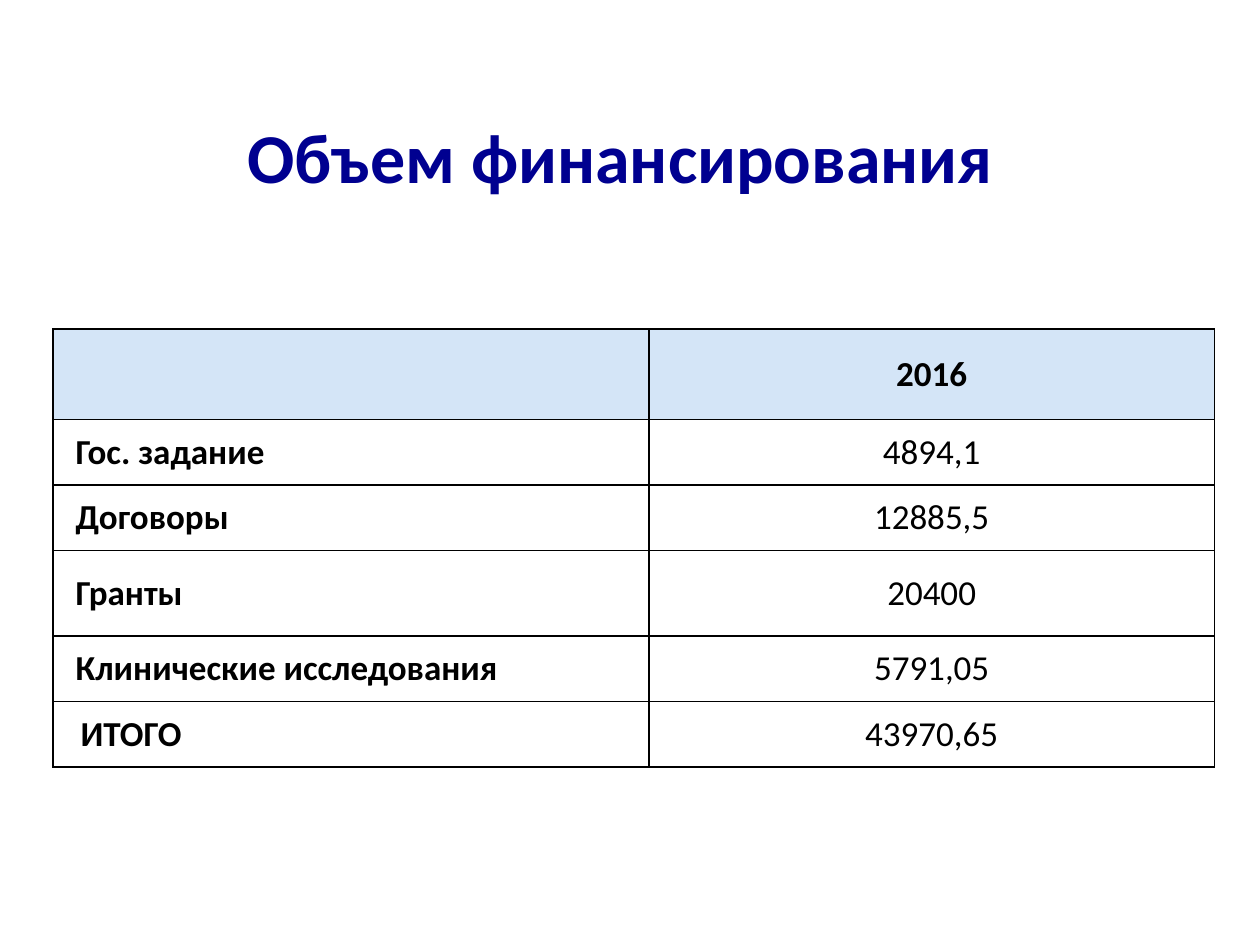
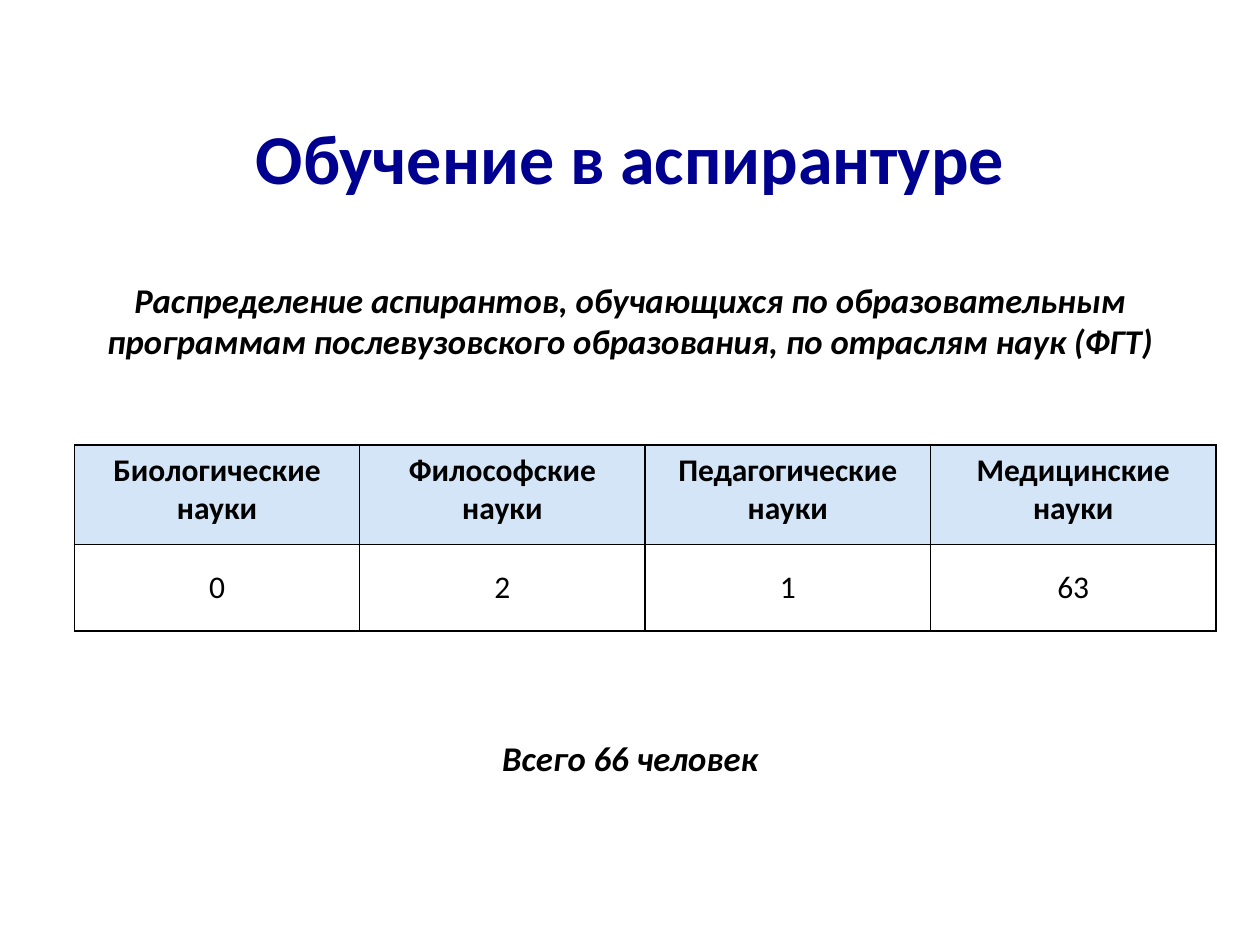
from dataclasses import dataclass

from lxml.etree import SubElement
from pptx import Presentation
from pptx.dml.color import RGBColor as RGB
from pptx.enum.text import MSO_ANCHOR as Anchor, PP_ALIGN as Align
from pptx.oxml.ns import qn
from pptx.util import Inches, Pt


# Shared look
@dataclass(frozen=True)
class Theme:
    face: str = "Calibri"
    navy: RGB = RGB(0x00, 0x00, 0x90)
    black: RGB = RGB(0x00, 0x00, 0x00)
    head: RGB = RGB(0xD4, 0xE5, 0xF7)
    title: float = 40
    note: float = 19.8
    line: float = 1


@dataclass(frozen=True)
class Box:
    left: float
    top: float
    width: float
    height: float

    def place(self) -> tuple:
        return tuple(map(Inches, (self.left, self.top, self.width, self.height)))


@dataclass(frozen=True)
class Pad:
    left: float = 0.1
    side: float = 0.1
    edge: float = 0.05


@dataclass(frozen=True)
class Row:
    height: float
    texts: tuple
    pad: Pad = Pad()
    head: bool = False
    anchor: Anchor = Anchor.MIDDLE


@dataclass(frozen=True)
class Grid:
    box: Box
    cols: tuple
    rows: tuple
    size: float
    labels: bool = False


THEME = Theme()


def set_all(item, values: dict) -> None:
    for name, value in values.items():
        setattr(item, name, value)


def write(frame, text: str, size: float, color: RGB = THEME.black,
          align: Align = Align.CENTER, **style) -> None:
    """Fill a text frame with one styled paragraph."""
    para = frame.paragraphs[0]
    para.alignment = align
    font = para.font
    if text:
        run = para.add_run()
        run.text = text
        font = run.font
    set_all(font, {"name": THEME.face, "size": Pt(size), **style})
    font.color.rgb = color


def add_title(slide, text: str, box: Box, size: float) -> None:
    shape = slide.shapes.title
    set_all(shape, dict(zip(("left", "top", "width", "height"), box.place())))
    set_all(shape.text_frame, {"vertical_anchor": Anchor.MIDDLE, "word_wrap": True})
    write(shape.text_frame, text, size, THEME.navy, bold=True)


def add_note(slide, text: str, box: Box) -> None:
    frame = slide.shapes.add_textbox(*box.place()).text_frame
    set_all(frame, {"vertical_anchor": Anchor.MIDDLE, "word_wrap": True})
    write(frame, text, THEME.note, bold=True, italic=True)


def add_edges(cell) -> None:
    """Draw a thin line on each side of a cell."""
    props = cell._tc.get_or_add_tcPr()
    for side in ("lnL", "lnR", "lnT", "lnB"):
        line = SubElement(props, qn(f"a:{side}"), w=str(Pt(THEME.line)))
        fill = SubElement(line, qn("a:solidFill"))
        SubElement(fill, qn("a:srgbClr"), val=str(THEME.black))


def fill_cell(cell, text: str, row: Row, size: float, label: bool) -> None:
    pad = row.pad
    set_all(cell, {
        "margin_left": Inches(pad.left if label else pad.side),
        "margin_right": Inches(pad.side),
        "margin_top": Inches(pad.edge),
        "margin_bottom": Inches(pad.edge),
        "vertical_anchor": row.anchor,
    })
    add_edges(cell)
    if row.head:
        cell.fill.solid()
        cell.fill.fore_color.rgb = THEME.head
    else:
        cell.fill.background()
    align = Align.LEFT if label else Align.CENTER
    write(cell.text_frame, text, size, align=align, bold=row.head or label)


def add_grid(slide, grid: Grid) -> None:
    shape = slide.shapes.add_table(len(grid.rows), len(grid.cols), *grid.box.place())
    table = shape.table
    set_all(table, {"first_row": False, "horz_banding": False})
    for col, width in zip(table.columns, grid.cols):
        col.width = Inches(width)
    for r, row in enumerate(grid.rows):
        table.rows[r].height = Inches(row.height)
        for c, text in enumerate(row.texts):
            label = grid.labels and c == 0
            fill_cell(table.cell(r, c), text, row, grid.size, label)


# Slide content
SLIM = Pad(left=0.18, edge=0)
WIDE = Pad(left=0.22, side=0.14, edge=0.07)

FUNDS = Grid(
    Box(0.42, 2.61, 9.22, 3.48), (4.73, 4.49),
    (
        Row(0.72, ("", "2016"), WIDE, head=True),
        Row(0.52, ("Гос. задание", "4894,1"), SLIM),
        Row(0.52, ("Договоры", "12885,5"), SLIM),
        Row(0.68, ("Гранты", "20400"), SLIM),
        Row(0.52, ("Клинические исследования", "5791,05"), SLIM),
        Row(0.52, ("ИТОГО", "43970,65"), WIDE),
    ),
    size=20, labels=True,
)

FIELDS = ("Биологические", "Философские", "Педагогические", "Медицинские")
STUDY = Grid(
    Box(0.59, 3.53, 9.06, 1.48), (9.06 / len(FIELDS),) * len(FIELDS),
    (
        Row(0.79, tuple(f"{field} науки" for field in FIELDS),
            head=True, anchor=Anchor.TOP),
        Row(0.69, ("0", "2", "1", "63")),
    ),
    size=18,
)


def main() -> None:
    deck = Presentation()
    set_all(deck, {"slide_width": Inches(10), "slide_height": Inches(7.5)})
    layout = deck.slide_layouts.get_by_name("Title Only")

    # Funding
    slide = deck.slides.add_slide(layout)
    add_title(slide, "Объем финансирования", Box(0.42, 0.61, 9, 1.25), THEME.title)
    add_grid(slide, FUNDS)

    # Postgraduate study
    slide = deck.slides.add_slide(layout)
    add_title(slide, "Обучение в аспирантуре", Box(0.5, 0.9, 9, 0.69), THEME.title)
    add_note(slide, "Распределение аспирантов, обучающихся по образовательным "
                    "программам послевузовского образования, по отраслям наук (ФГТ)",
             Box(0.5, 2.14, 9, 0.8))
    add_grid(slide, STUDY)
    add_note(slide, "Всего 66 человек", Box(0.5, 5.76, 9, 0.5))

    deck.save("out.pptx")


if __name__ == "__main__":
    main()
